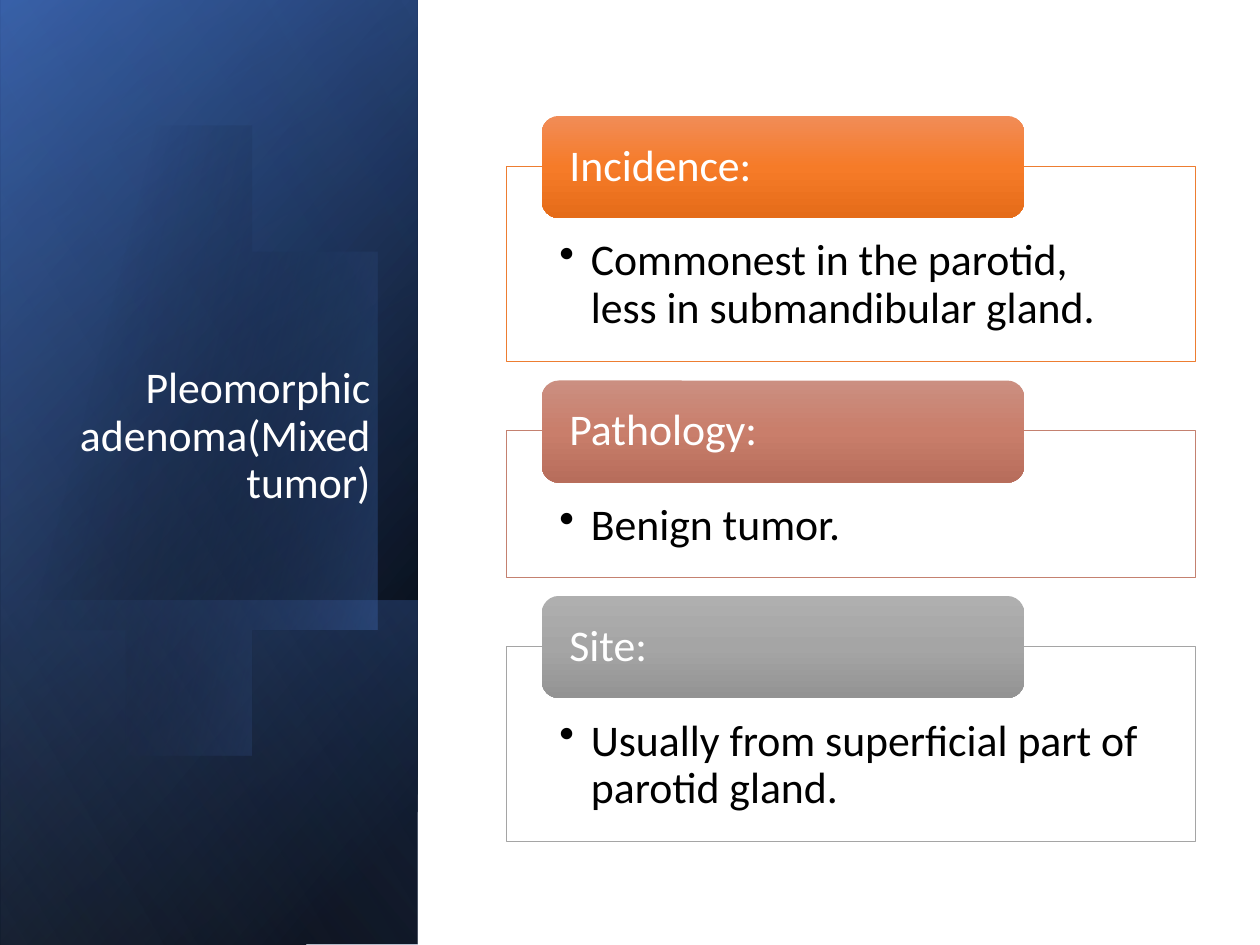
"""Build the pleomorphic adenoma slide: a blue gradient side panel and three labelled cards."""
from lxml import etree
from pptx import Presentation
from pptx.dml.color import RGBColor
from pptx.enum.shapes import MSO_SHAPE
from pptx.enum.text import MSO_ANCHOR, PP_ALIGN
from pptx.oxml.ns import qn
from pptx.util import Inches, Pt

RECTANGLE, ROUNDED = MSO_SHAPE.RECTANGLE, MSO_SHAPE.ROUNDED_RECTANGLE
TOP, MIDDLE, BOTTOM = MSO_ANCHOR.TOP, MSO_ANCHOR.MIDDLE, MSO_ANCHOR.BOTTOM
LEFT, RIGHT = PP_ALIGN.LEFT, PP_ALIGN.RIGHT

BLACK = RGBColor(0x00, 0x00, 0x00)
WHITE = RGBColor(0xFF, 0xFF, 0xFF)
NAVY = RGBColor(0x2F, 0x55, 0x97)
BLUE = RGBColor(0x44, 0x72, 0xC4)
PALE_BLUE = RGBColor(0x8F, 0xAA, 0xDC)
ORANGE = RGBColor(0xED, 0x7D, 0x31)
ROSE = RGBColor(0xC4, 0x81, 0x70)
GRAY = RGBColor(0xA5, 0xA5, 0xA5)
ORANGE_SHADES = (RGBColor(0xF1, 0x8C, 0x57), RGBColor(0xF6, 0x7B, 0x28), RGBColor(0xE5, 0x6C, 0x19))
ROSE_SHADES = (RGBColor(0xCB, 0x8F, 0x81), RGBColor(0xC9, 0x7E, 0x6B), RGBColor(0xB7, 0x6D, 0x5B))
GRAY_SHADES = (RGBColor(0xAF, 0xAF, 0xAF), GRAY, RGBColor(0x93, 0x93, 0x93))

TITLE = "Pleomorphic adenoma(Mixed tumor)"
CARDS = [
    ("Incidence:", "Commonest in the parotid, less in submandibular gland.", 1.55, ORANGE, ORANGE_SHADES),
    ("Pathology:", "Benign tumor.", 1.16, ROSE, ROSE_SHADES),
    ("Site:", "Usually from superficial part of parotid gland.", 1.55, GRAY, GRAY_SHADES),
]
CARD_LEFT, CARD_TOP, CARD_WIDTH, CARD_GAP = 4.02, 1.32, 5.47, 0.55
LABEL_LEFT, LABEL_RISE, LABEL_WIDTH, LABEL_HEIGHT = 4.3, 0.4, 3.83, 0.81

FULL_PANEL = (-2.09, 2.09, 7.5, 3.31)
LOWER_PANEL = (0.29, 4.48, 2.74, 3.31)
BACK_PANELS = [
    (FULL_PANEL, [(8, BLACK, 100), (100, NAVY, 100)], 50),
    (FULL_PANEL, [(0, BLACK, 0), (99, BLUE, 46)], 30),
    (LOWER_PANEL, [(2, BLUE, 29), (100, BLACK, 30)], 130),
]
FRONT_PANEL = (FULL_PANEL, [(0, BLACK, 0), (99, PALE_BLUE, 11)], 120)

BLOB_STOPS, BLOB_ANGLE = [(29, BLACK, 0), (100, BLUE, 43)], 14
BLOB_START = (0.96, 1.14)
BLOB_CURVES = [
    ((1.71, 1.22), (2.44, 1.92), (2.73, 2.9)),
    ((3.07, 4.12), (2.62, 5.31), (1.71, 5.57)),
    ((1.14, 5.74), (0.53, 5.5), (0.07, 5)),
    ((-0.03, 4.88),),
    ((-0.25, 1.66),),
    ((-0.15, 1.54),),
    ((0.02, 1.37), (0.22, 1.25), (0.45, 1.18)),
    ((0.62, 1.13), (0.79, 1.12), BLOB_START),
]
CURVE_STEPS = 16


def set_alpha(color_element, percent):
    etree.SubElement(color_element, qn("a:alpha"), val=str(percent * 1000))


def set_gradient(shape, stops, angle):
    shape.shadow.inherit = False
    shape.line.fill.background()
    shape.fill.gradient()
    gradient = shape.element.spPr.find(qn("a:gradFill"))
    gradient.clear()
    gradient.set("rotWithShape", "1")
    stop_list = etree.SubElement(gradient, qn("a:gsLst"))
    for position, color, alpha in stops:
        stop = etree.SubElement(stop_list, qn("a:gs"), pos=str(position * 1000))
        set_alpha(etree.SubElement(stop, qn("a:srgbClr"), val=str(color)), alpha)
    etree.SubElement(gradient, qn("a:lin"), ang=str(angle * 60000), scaled="0")


def add_panel(slide, box, stops, angle):
    panel = slide.shapes.add_shape(RECTANGLE, *map(Inches, box))
    panel.rotation = 90
    panel.element.spPr.find(qn("a:xfrm")).set("flipH", "1")
    set_gradient(panel, stops, angle)


def curve_points(start, curve):
    if len(curve) == 1:
        return list(curve)
    points = (start, *curve)
    result = []
    for step in range(1, CURVE_STEPS + 1):
        t = step / CURVE_STEPS
        weights = ((1 - t) ** 3, 3 * t * (1 - t) ** 2, 3 * t * t * (1 - t), t ** 3)
        result.append(tuple(sum(w * p[axis] for w, p in zip(weights, points)) for axis in (0, 1)))
    return result


def add_blob(slide):
    outline = [BLOB_START]
    for curve in BLOB_CURVES:
        outline += curve_points(outline[-1], curve)
    builder = slide.shapes.build_freeform(*outline[0], scale=Inches(1))
    builder.add_line_segments(outline[1:], close=True)
    set_gradient(builder.convert_to_shape(), BLOB_STOPS, BLOB_ANGLE)


def set_text(shape, text, color, alignment, anchor, insets):
    frame = shape.text_frame
    frame.text = text
    frame.word_wrap = True
    frame.vertical_anchor = anchor
    frame.margin_left, frame.margin_top, frame.margin_right, frame.margin_bottom = map(Inches, insets)
    paragraph = frame.paragraphs[0]
    paragraph.alignment = alignment
    paragraph.line_spacing = 0.9
    font = paragraph.runs[0].font
    font.name, font.size, font.color.rgb = "Calibri", Pt(25), color
    return paragraph


def add_bullet(paragraph):
    properties = paragraph._p.get_or_add_pPr()
    properties.set("marL", str(Inches(0.25)))
    properties.set("indent", str(-Inches(0.25)))
    etree.SubElement(properties, qn("a:buChar"), char="•")


def add_card(slide, top, label_text, body_text, height, line_color, shades):
    card = slide.shapes.add_shape(RECTANGLE, *map(Inches, (CARD_LEFT, top, CARD_WIDTH, height)))
    card.shadow.inherit = False
    card.fill.solid()
    card.fill.fore_color.rgb = WHITE
    set_alpha(card.element.spPr.find(qn("a:solidFill"))[0], 90)
    card.line.color.rgb = line_color
    card.line.width = Pt(0.5)
    add_bullet(set_text(card, body_text, BLACK, LEFT, TOP, (0.42, 0.57, 0.42, 0.19)))

    label_box = (LABEL_LEFT, top - LABEL_RISE, LABEL_WIDTH, LABEL_HEIGHT)
    label = slide.shapes.add_shape(ROUNDED, *map(Inches, label_box))
    set_gradient(label, [(50 * i, shade, 100) for i, shade in enumerate(shades)], 90)
    set_text(label, label_text, WHITE, LEFT, MIDDLE, (0.18, 0, 0.18, 0))


def main():
    presentation = Presentation()
    presentation.slide_width, presentation.slide_height = Inches(10), Inches(7.5)
    slide = presentation.slides.add_slide(presentation.slide_layouts[5])
    for panel in BACK_PANELS:
        add_panel(slide, *panel)
    add_blob(slide)
    add_panel(slide, *FRONT_PANEL)

    title = slide.shapes.title
    title.left, title.top, title.width, title.height = map(Inches, (0.48, 1.84, 2.56, 2.62))
    set_text(title, TITLE, WHITE, RIGHT, BOTTOM, (0.1, 0.05, 0.1, 0.43))
    title.element.getparent().append(title.element)

    top = CARD_TOP
    for card in CARDS:
        add_card(slide, top, *card)
        top += card[2] + CARD_GAP
    presentation.save("out.pptx")


if __name__ == "__main__":
    main()
